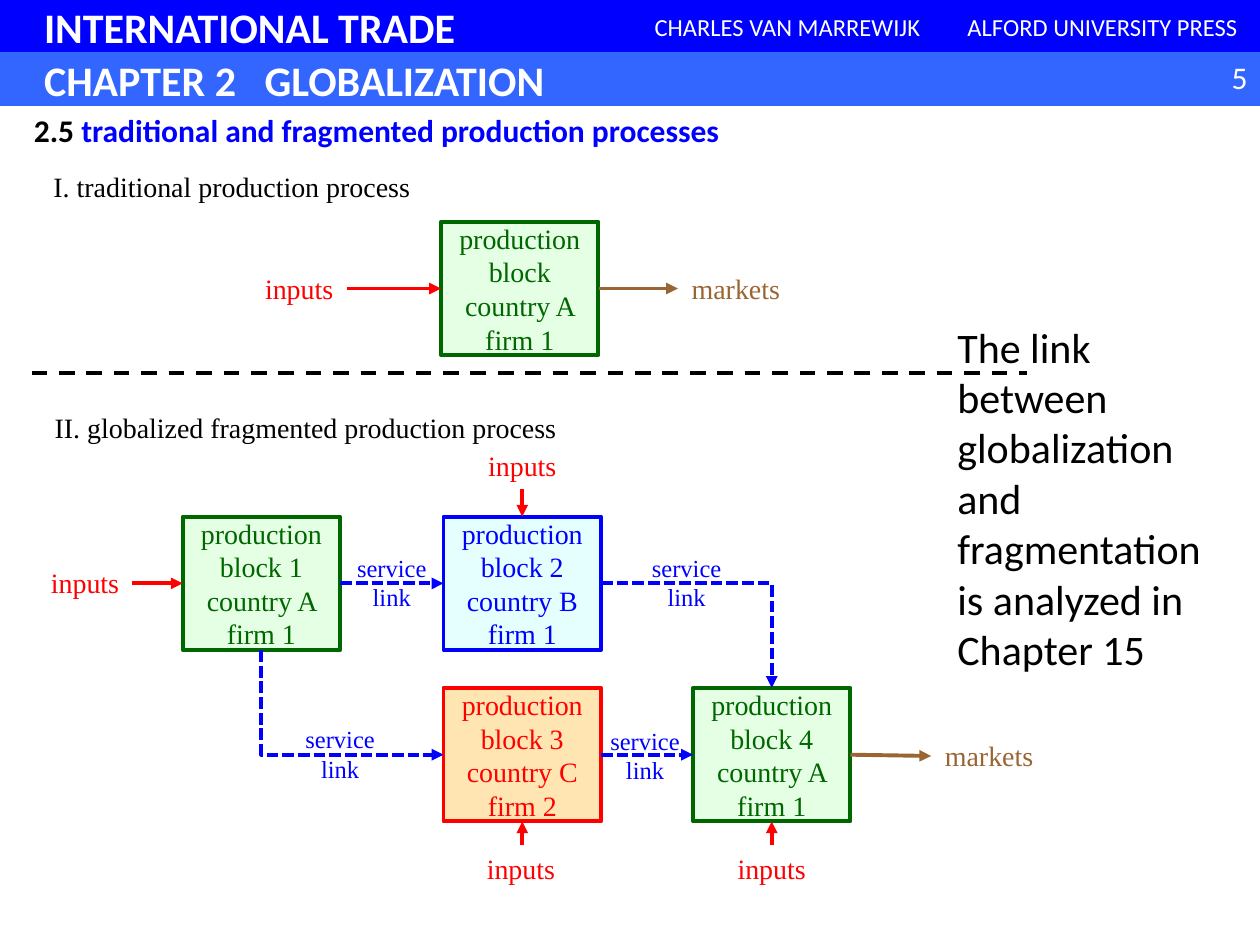
from dataclasses import dataclass
from lxml.etree import SubElement as Sub
from pptx import Presentation
from pptx.dml.color import RGBColor as RGB
from pptx.enum.dml import MSO_LINE as Dash
from pptx.enum.shapes import MSO_CONNECTOR as Link, MSO_SHAPE as Form
from pptx.enum.text import MSO_ANCHOR as Anchor, PP_ALIGN as Align
from pptx.oxml.ns import qn
from pptx.util import Inches, Pt


@dataclass(frozen=True)
class Theme:
    sans: str = "Calibri"
    serif: str = "Times New Roman"
    white: str = "FFFFFF"
    black: str = "000000"
    blue: str = "0000FF"
    sky: str = "3366FF"
    red: str = "FF0000"
    green: str = "006600"
    brown: str = "996633"
    mint: str = "CCFFCC"
    aqua: str = "CCFFFF"
    peach: str = "FFCC66"
    title: int = 24
    head: int = 18
    label: int = 16
    small: int = 14
    stroke: float = 2.25


class Deck:
    def __init__(self, theme):
        self.theme = theme
        self.file = Presentation()
        self.file.slide_width = Inches(10)
        self.file.slide_height = Inches(7.5)
        self.slide = self.file.slides.add_slide(self.file.slide_layouts[6])

    def put(self, frame, lines, size, font, align, bold=False):
        frame.word_wrap = True
        for i, line in enumerate(lines):
            para = frame.paragraphs[0] if i == 0 else frame.add_paragraph()
            para.alignment = align
            for words, tint in line:
                run = para.add_run()
                run.text = words
                run.font.size = Pt(size)
                run.font.name = font
                run.font.bold = bold
                run.font.color.rgb = RGB.from_string(tint)

    def rect(self, x, y, w, h, fill, edge=None, width=0.75):
        shape = self.slide.shapes.add_shape(
            Form.RECTANGLE, Inches(x), Inches(y), Inches(w), Inches(h))
        shape.shadow.inherit = False
        shape.fill.solid()
        shape.fill.fore_color.rgb = RGB.from_string(fill)
        if edge:
            shape.line.color.rgb = RGB.from_string(edge)
            shape.line.width = Pt(width)
        else:
            shape.line.fill.background()
        shape.text_frame.vertical_anchor = Anchor.MIDDLE
        return shape

    def banner(self, y, fill, words, edge=None):
        t = self.theme
        frame = self.rect(0, y, 10, 0.42, fill, edge).text_frame
        frame.margin_left = Inches(0.35)
        self.put(frame, [[(words, t.white)]], t.title, t.sans, Align.LEFT, True)
        stops = Sub(frame.paragraphs[0]._p.get_or_add_pPr(), qn("a:tabLst"))
        Sub(stops, qn("a:tab"), pos=str(Inches(1.75)), algn="l")

    def credit(self, x, words):
        t = self.theme
        frame = self.rect(x, 0, 2.5, 0.42, t.blue, t.blue).text_frame
        self.put(frame, [[(words, t.white)]], t.small, t.sans, Align.CENTER)

    def block(self, x, y, words, tint, fill):
        t = self.theme
        shape = self.rect(x, y, BOX_W, BOX_H, fill, tint, t.stroke)
        color = shape._element.spPr.find(qn("a:solidFill"))[0]
        Sub(color, qn("a:alpha"), val="50000")
        self.put(shape.text_frame, [[(words, tint)]],
                 t.label, t.serif, Align.CENTER)

    def text(self, x, y, w, h, lines, size, font,
             align=Align.LEFT, bold=False, wrap=True):
        box = self.slide.shapes.add_textbox(
            Inches(x), Inches(y), Inches(w), Inches(h))
        self.put(box.text_frame, lines, size, font, align, bold)
        box.text_frame.word_wrap = wrap

    def label(self, x, y, w, words, tint):
        t = self.theme
        self.text(x, y, w, 0.37, [[(words, tint)]],
                  t.label, t.serif, Align.CENTER, wrap=False)

    def service(self, x, y):
        t = self.theme
        lines = [[("service", t.blue)], [("link", t.blue)]]
        self.text(x, y, 0.76, 0.57, lines,
                  t.small, t.serif, Align.CENTER, wrap=False)

    def line(self, start, end, tint, dash=None, head=True, kind=Link.STRAIGHT):
        ends = [Inches(v) for v in (*start, *end)]
        wire = self.slide.shapes.add_connector(kind, *ends)
        wire.line.color.rgb = RGB.from_string(tint)
        wire.line.width = Pt(self.theme.stroke)
        if dash:
            wire.line.dash_style = dash
        props = wire._element.spPr
        if head:
            Sub(props.find(qn("a:ln")), qn("a:tailEnd"), type="triangle")
        Sub(props, qn("a:effectLst"))
        return wire

    def bend(self, start, end, tint, dash, down=False):
        wire = self.line(start, end, tint, dash, kind=Link.ELBOW)
        props = wire._element.spPr
        props.find(qn("a:prstGeom")).set("prst", "bentConnector2")
        if down:
            wide, high = wire.width, wire.height
            wire.left += (wide - high) // 2
            wire.top += (high - wide) // 2
            wire.width, wire.height = high, wide
            turn = props.find(qn("a:xfrm"))
            turn.set("rot", "16200000")
            turn.set("flipH", "1")


BOX_W, BOX_H = 1.25, 1.06
LEFT, MID, RIGHT = 1.45, 3.52, 5.5
SOLO, TOP, LOW = 1.76, 4.1, 5.46


def main():
    t = Theme()
    deck = Deck(t)
    half = BOX_H / 2
    mid_x, right_x = MID + BOX_W / 2, RIGHT + BOX_W / 2
    solo_y, top_y, low_y = SOLO + half, TOP + half, LOW + half

    deck.banner(0, t.blue, "INTERNATIONAL TRADE")
    deck.credit(5, "CHARLES VAN MARREWIJK")
    deck.credit(7.5, "ALFORD UNIVERSITY PRESS")
    deck.banner(0.42, t.sky, "CHAPTER 2\tGLOBALIZATION", t.sky)
    deck.text(9.33, 0.41, 0.67, 0.4, [[("5", t.white)]],
              t.head, t.sans, Align.RIGHT)

    for x, y, words, tint, fill in (
        (3.5, SOLO, "production block country A firm 1", t.green, t.mint),
        (LEFT, TOP, "production block 1 country A firm 1", t.green, t.mint),
        (MID, TOP, "production block 2 country B firm 1", t.blue, t.aqua),
        (MID, LOW, "production block 3 country C firm 2", t.red, t.peach),
        (RIGHT, LOW, "production block 4 country A firm 1", t.green, t.mint),
    ):
        deck.block(x, y, words, tint, fill)

    deck.label(0.3, 1.3, 3.08, "I. traditional production process", t.black)
    deck.label(0.3, 3.21, 4.25,
               "II. globalized fragmented production process", t.black)
    for x, y in ((2, 2.11), (0.3, 4.44), (3.77, 3.51), (3.76, 6.71), (5.75, 6.71)):
        deck.label(x, y, 0.75, "inputs", t.red)
    for x, y in ((5.38, 2.11), (7.39, 5.81)):
        deck.label(x, y, 0.92, "markets", t.brown)

    for start, end, tint in (
        ((2.75, solo_y), (3.5, solo_y), t.red),
        ((4.75, solo_y), (5.38, solo_y), t.brown),
        ((1.05, top_y), (LEFT, top_y), t.red),
        ((mid_x, 3.88), (mid_x, TOP), t.red),
        ((mid_x, 6.71), (mid_x, LOW + BOX_H), t.red),
        ((right_x, 6.71), (right_x, LOW + BOX_H), t.red),
        ((RIGHT + BOX_W, low_y), (7.39, 6), t.brown),
    ):
        deck.line(start, end, tint)

    dots = Dash.SQUARE_DOT
    deck.line((LEFT + BOX_W, top_y), (MID, top_y), t.blue, dots)
    deck.line((MID + BOX_W, low_y), (RIGHT, low_y), t.blue, dots)
    deck.bend((LEFT + BOX_W / 2, TOP + BOX_H), (MID, low_y), t.blue, dots, True)
    deck.bend((MID + BOX_W, top_y), (right_x, LOW), t.blue, dots)
    for x, y in ((2.73, 4.34), (2.32, 5.7), (4.74, 5.71), (5.07, 4.34)):
        deck.service(x, y)

    deck.line((0.25, 2.96), (8.15, 2.96), t.black, Dash.DASH, head=False)
    deck.text(0.17, 0.83, 5.78, 0.4, [[
        ("2.5 ", t.black),
        ("traditional and fragmented production processes", t.blue),
    ]], t.head, t.sans, bold=True)
    note = "The link between globalization and fragmentation is analyzed in Chapter 15"
    deck.text(7.5, 2.5, 2.17, 2.93, [[(note, t.black)]], t.title, t.sans)
    deck.file.save("out.pptx")


if __name__ == "__main__":
    main()
